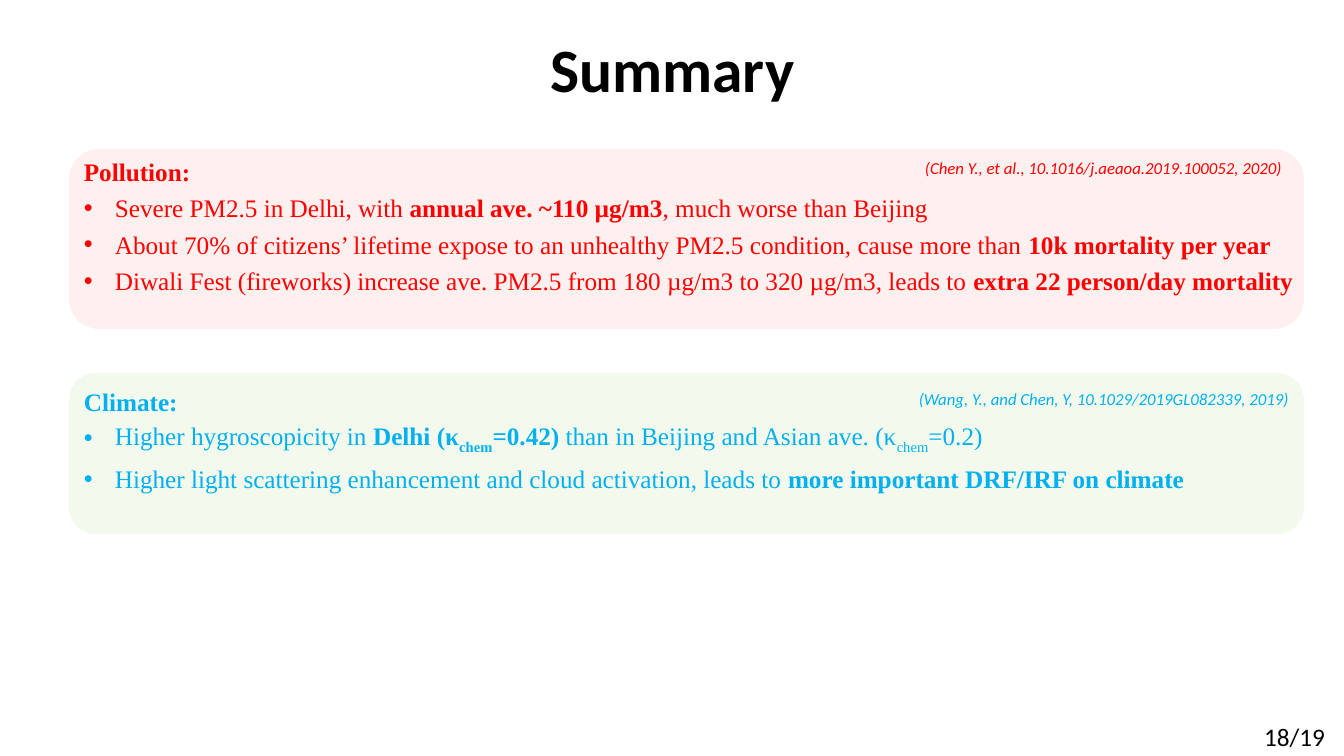
from lxml import etree
from pptx import Presentation
from pptx import util as u
from pptx.dml.color import RGBColor
from pptx.enum import shapes, text
from pptx.oxml.ns import qn

RED = RGBColor(0xFF, 0x00, 0x00)
BLUE = RGBColor(0x00, 0xB0, 0xF0)
GREEN = RGBColor(0x92, 0xD0, 0x50)
BLACK = RGBColor(0x00, 0x00, 0x00)

SANS, SERIF = "Calibri", "Times New Roman"
PX = 914400 / 100.8

# Inline styles: "" plain, "b" bold, "s" subscript
PANELS = [
    {
        "box": (69, 149, 1235, 180), "fill": RED, "opacity": 6, "color": RED,
        "text_top": 145, "pitch": 26,
        "heading": "Pollution:",
        "bullets": [
            [("Severe PM2.5 in Delhi, with ", ""), ("annual ave. ~110 µg/m3", "b"),
             (", much worse than Beijing", "")],
            [("About 70% of citizens’ lifetime expose to an unhealthy PM2.5 condition, "
              "cause more than ", ""), ("10k mortality per year", "b")],
            [("Diwali Fest (fireworks) increase ave. PM2.5 from 180 µg/m3 to 320 µg/m3, "
              "leads to ", ""), ("extra 22 person/day mortality", "b")],
        ],
        "citation": "(Chen Y., et al., 10.1016/j.aeaoa.2019.100052, 2020)",
        "citation_at": (915, 149),
    },
    {
        "box": (69, 373, 1235, 161), "fill": GREEN, "opacity": 10, "color": BLUE,
        "text_top": 373, "pitch": 27.5,
        "heading": "Climate:",
        "bullets": [
            [("Higher hygroscopicity in ", ""), ("Delhi (κ", "b"), ("chem", "bs"),
             ("=0.42) ", "b"), ("than in Beijing and Asian ave. (κ", ""), ("chem", "s"),
             ("=0.2)", "")],
            [("Higher light scattering enhancement and cloud activation, leads to ", ""),
             ("more important DRF/IRF on climate", "b")],
        ],
        "citation": "(Wang, Y., and Chen, Y, 10.1029/2019GL082339, 2019)",
        "citation_at": (909, 380),
    },
]


def px(length):
    return round(length * PX)


def add_textbox(slide, box, wrap=True):
    frame = slide.shapes.add_textbox(*map(px, box)).text_frame
    frame.word_wrap = wrap
    return frame


def add_run(paragraph, words, font, size, color, style=""):
    """Append a run; style letters are b (bold), i (italic), s (subscript)."""
    run = paragraph.add_run()
    run.text = words
    run.font.name = font
    run.font.size = u.Pt(size)
    run.font.color.rgb = color
    run.font.bold = "b" in style
    run.font.italic = "i" in style
    if "s" in style:
        run._r.get_or_add_rPr().set("baseline", "-25000")


def make_bullet(paragraph):
    properties = paragraph._p.get_or_add_pPr()
    properties.set("marL", str(px(31)))
    properties.set("indent", str(-px(31)))
    etree.SubElement(properties, qn("a:buFont")).set("typeface", "Arial")
    etree.SubElement(properties, qn("a:buChar")).set("char", "•")


def add_background(slide, panel):
    shape = slide.shapes.add_shape(
        shapes.MSO_SHAPE.ROUNDED_RECTANGLE, *map(px, panel["box"]))
    shape.shadow.inherit = False
    shape.line.fill.background()
    shape.fill.solid()
    shape.fill.fore_color.rgb = panel["fill"]
    color = shape._element.spPr.find(".//" + qn("a:srgbClr"))
    etree.SubElement(color, qn("a:alpha")).set("val", str(panel["opacity"] * 1000))


def add_panel(slide, panel):
    add_background(slide, panel)
    left, _, width, height = panel["box"]
    frame = add_textbox(slide, (left + 5, panel["text_top"], width, height), wrap=False)
    heading = frame.paragraphs[0]
    add_run(heading, panel["heading"], SERIF, 18, panel["color"], "b")
    for runs in panel["bullets"]:
        bullet = frame.add_paragraph()
        make_bullet(bullet)
        for words, style in runs:
            add_run(bullet, words, SERIF, 18, panel["color"], style)
    for paragraph in frame.paragraphs:
        paragraph.line_spacing = u.Pt(panel["pitch"])

    citation = add_textbox(slide, (*panel["citation_at"], 400, 34)).paragraphs[0]
    citation.line_spacing = 1.2
    add_run(citation, panel["citation"], SANS, 12, panel["color"], "i")


def main():
    presentation = Presentation()
    presentation.slide_width = px(1344)
    presentation.slide_height = px(756)
    slide = presentation.slides.add_slide(presentation.slide_layouts[6])

    title_frame = add_textbox(slide, (93, 0, 1159, 146))
    title_frame.vertical_anchor = text.MSO_ANCHOR.MIDDLE
    title = title_frame.paragraphs[0]
    title.alignment = text.PP_ALIGN.CENTER
    title.line_spacing = 0.9
    add_run(title, "Summary", SANS, 44, BLACK, "b")

    for panel in PANELS:
        add_panel(slide, panel)

    page_number = add_textbox(slide, (1041, 716, 294, 40)).paragraphs[0]
    page_number.alignment = text.PP_ALIGN.RIGHT
    add_run(page_number, "18/19", SANS, 18, BLACK)

    presentation.save("out.pptx")


if __name__ == "__main__":
    main()
